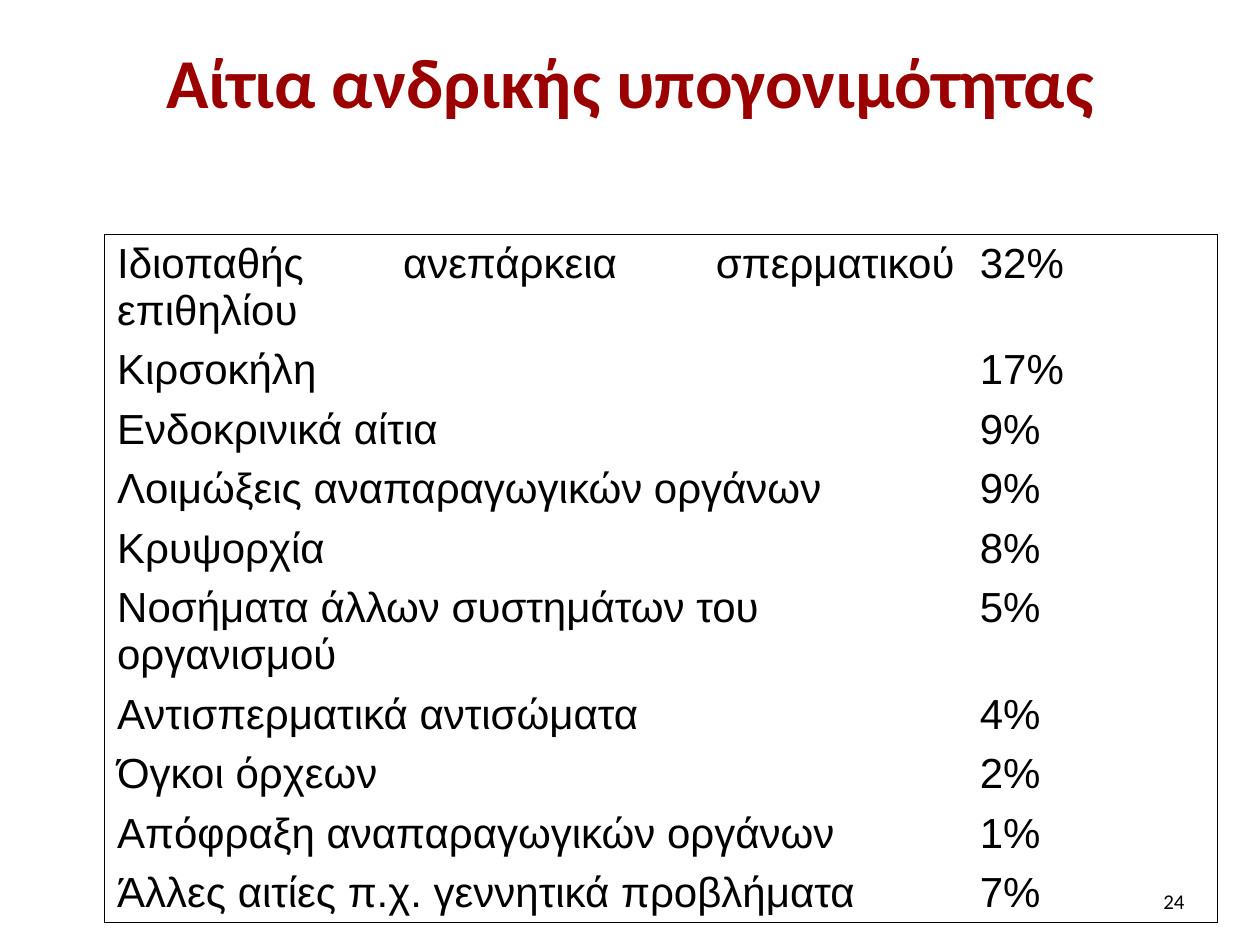
from lxml import etree
from pptx import Presentation
from pptx.dml.color import RGBColor
from pptx.enum import text
from pptx.oxml import ns
from pptx.util import Inches, Pt

WIDTH, HEIGHT = 10, 7.5
BLACK, DARK_RED = "000000", "9B0000"

CAUSES = [
    ("Ιδιοπαθής ανεπάρκεια σπερματικού επιθηλίου", "32%"),
    ("Κιρσοκήλη", "17%"),
    ("Ενδοκρινικά αίτια", "9%"),
    ("Λοιμώξεις αναπαραγωγικών οργάνων", "9%"),
    ("Κρυψορχία", "8%"),
    ("Νοσήματα άλλων συστημάτων του οργανισμού", "5%"),
    ("Αντισπερματικά αντισώματα", "4%"),
    ("Όγκοι όρχεων", "2%"),
    ("Απόφραξη αναπαραγωγικών οργάνων", "1%"),
    ("Άλλες αιτίες π.χ. γεννητικά προβλήματα", "7%"),
]
LEFT_ALIGNED_ROW = 5


def color(value):
    return RGBColor.from_string(value)


def write(frame, words, font="Calibri", size=12, fill=BLACK, bold=False,
          align=text.PP_ALIGN.LEFT):
    frame.word_wrap = True
    paragraph = frame.paragraphs[0]
    paragraph.alignment = align
    run = paragraph.add_run()
    run.text = words
    run.font.name, run.font.size, run.font.bold = font, Pt(size), bold
    run.font.color.rgb = color(fill)


def set_borders(cell, sides, line=BLACK, width=0.75):
    """Draw the named sides of a cell and clear the others."""
    properties = cell._tc.get_or_add_tcPr()
    for place, side in enumerate("LRTB"):
        border = etree.Element(ns.qn(f"a:ln{side}"), w=str(Pt(width)))
        if side in sides:
            paint = etree.SubElement(border, ns.qn("a:solidFill"))
            etree.SubElement(paint, ns.qn("a:srgbClr"), val=line)
        else:
            etree.SubElement(border, ns.qn("a:noFill"))
        properties.insert(place, border)


class Deck:
    def __init__(self):
        self.file = Presentation()
        self.file.slide_width, self.file.slide_height = Inches(WIDTH), Inches(HEIGHT)
        self.slide = self.file.slides.add_slide(self.file.slide_layouts[5])

    def box(self, left, top, width, height):
        """Turn shares of the slide's size into lengths."""
        return (Inches(left * WIDTH), Inches(top * HEIGHT),
                Inches(width * WIDTH), Inches(height * HEIGHT))

    def title(self, words, *place):
        title = self.slide.shapes.title
        title.left, title.top, title.width, title.height = self.box(*place)
        title.text_frame.vertical_anchor = text.MSO_ANCHOR.MIDDLE
        write(title.text_frame, words, size=40, fill=DARK_RED, bold=True,
              align=text.PP_ALIGN.CENTER)

    def table(self, rows, shares, *place):
        frame = self.slide.shapes.add_table(len(rows), len(shares), *self.box(*place))
        table = frame.table
        table.first_row = table.horz_banding = False
        for column, share in zip(table.columns, shares):
            column.width = int(frame.width * share)
        for r, row in enumerate(rows):
            table.rows[r].height = Inches(0.28)
            for c, words in enumerate(row):
                cell = table.cell(r, c)
                cell.fill.background()
                ragged = (r, c) == (LEFT_ALIGNED_ROW, 0)
                write(cell.text_frame, words, font="Arial", size=24,
                      align=text.PP_ALIGN.LEFT if ragged else text.PP_ALIGN.JUSTIFY)
                # Only the outer frame of the table is ruled
                sides = "L" if c == 0 else "R"
                sides += "T" if r == 0 else "B" if r == len(rows) - 1 else ""
                set_borders(cell, sides)

    def page_number(self, words, *place):
        number = self.slide.shapes.add_textbox(*self.box(*place)).text_frame
        number.vertical_anchor = text.MSO_ANCHOR.MIDDLE
        write(number, words, align=text.PP_ALIGN.RIGHT)


def main():
    deck = Deck()
    # Heading
    deck.title("Αίτια ανδρικής υπογονιμότητας", 0.05, 0.02, 0.9, 0.13)
    # Causes and their shares
    deck.table(CAUSES, (0.82, 0.18), 0.083, 0.248, 0.835, 0.37)
    # Footer
    deck.page_number("24", 0.717, 0.927, 0.233, 0.053)
    deck.file.save("out.pptx")


if __name__ == "__main__":
    main()
